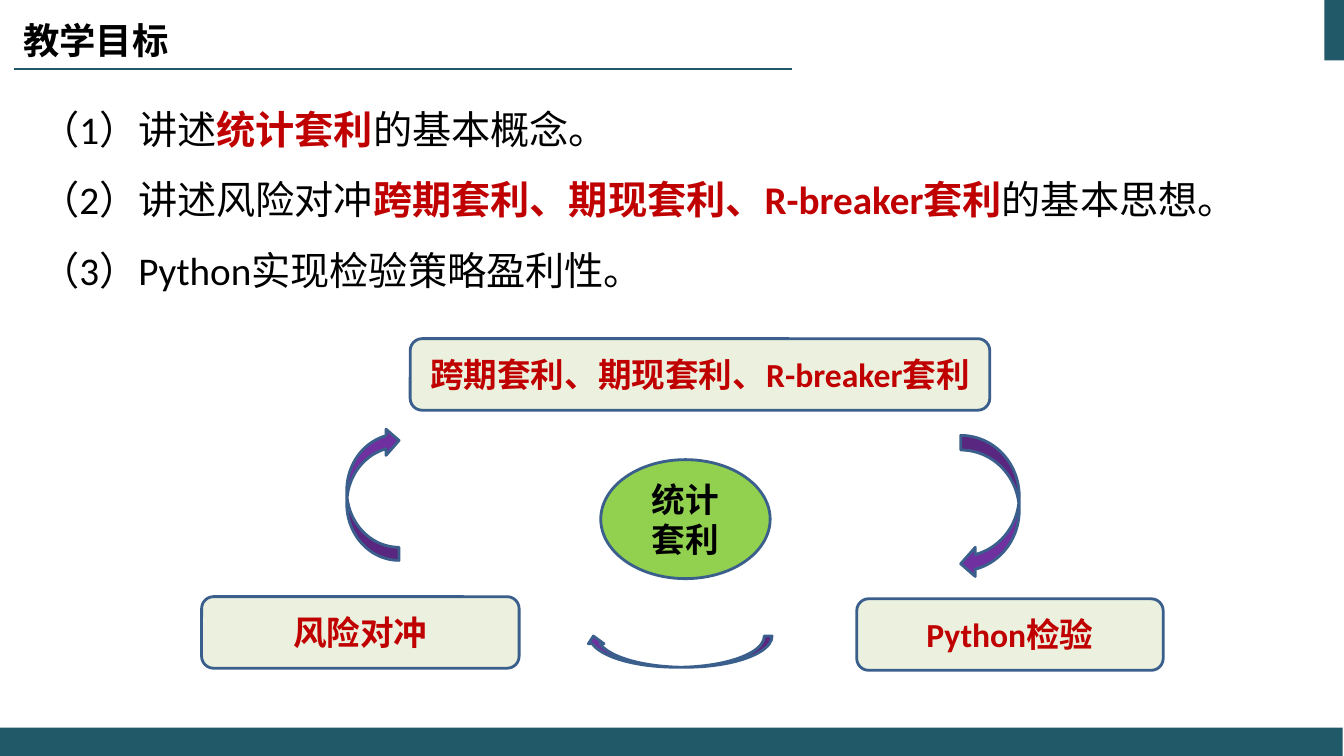
import pptx
import pptx.util
import pptx.dml.color
import pptx.enum.shapes
import pptx.enum.text
import pptx.oxml.ns
import lxml.etree

Pt = pptx.util.Pt
RGB = pptx.dml.color.RGBColor.from_string
SHAPE = pptx.enum.shapes.MSO_SHAPE
ALIGN = pptx.enum.text.PP_ALIGN
qn = pptx.oxml.ns.qn

COLORS = {
    "teal": "215968",
    "red": "C00000",
    "black": "000000",
    "green": "92D050",
    "pale": "EBF1DE",
    "purple": "7030A0",
    "outline": "3A5F8C",
}
CJK = "Noto Sans CJK SC"

prs = pptx.Presentation()
prs.slide_width, prs.slide_height = Pt(960), Pt(540)
s = prs.slides.add_slide(prs.slide_layouts[6])


def add_shape(kind, box, fill, outlined=True):
    sp = s.shapes.add_shape(kind, *[Pt(v) for v in box])
    sp.shadow.inherit = False
    sp.fill.solid()
    sp.fill.fore_color.rgb = RGB(COLORS[fill])
    if outlined:
        sp.line.color.rgb = RGB(COLORS["outline"])
        sp.line.width = Pt(2)
    else:
        sp.line.fill.background()
    return sp


def add_text(tf, paragraphs, size, font="Calibri", align=ALIGN.LEFT, spacing=None):
    tf.word_wrap = True
    for i, runs in enumerate(paragraphs):
        p = tf.add_paragraph() if i else tf.paragraphs[0]
        p.alignment = align
        p.line_spacing = spacing
        for text, color, bold in runs:
            r = p.add_run()
            r.text = text
            r.font.size = Pt(size)
            r.font.bold = bold
            r.font.color.rgb = RGB(COLORS[color])
            r.font.name = font
            ea = lxml.etree.SubElement(r.font._element, qn("a:ea"))
            ea.set("typeface", "Calibri")


add_shape(SHAPE.RECTANGLE, (946.1, 0, 13.9, 43.2), "teal", False)
rule = s.shapes.add_connector(
    pptx.enum.shapes.MSO_CONNECTOR.STRAIGHT, Pt(566), Pt(49), Pt(10), Pt(49))
rule.line.color.rgb = RGB(COLORS["teal"])
rule.line.width = Pt(1.5)
lxml.etree.SubElement(rule._element.spPr, qn("a:effectLst"))
add_shape(SHAPE.RECTANGLE, (0, 519.8, 959, 20.2), "teal", False)

goals = [
    [("（1）讲述", "black", False), ("统计套利", "red", True),
     ("的基本概念。", "black", False)],
    [("（2）讲述风险对冲", "black", False),
     ("跨期套利、期现套利、R-breaker套利", "red", True),
     ("的基本思想。", "black", False)],
    [("（3）Python实现检验策略盈利性。", "black", False)],
]
body = s.shapes.add_textbox(Pt(21.6), Pt(54.7), Pt(906.5), Pt(461.5))
add_text(body.text_frame, goals, 28, spacing=1.5)

hub = add_shape(SHAPE.OVAL, (429.1, 328.3, 121, 85), "green")
add_text(hub.text_frame, [[("统计", "black", True)], [("套利", "black", True)]],
         24, CJK, ALIGN.CENTER)

steps = [
    ("跨期套利、期现套利、R-breaker套利", (293, 241.9, 414, 51.1)),
    ("Python检验", (612, 427.7, 218.9, 51.1)),
    ("风险对冲", (144, 426.2, 226.8, 51.1)),
]
for text, box in steps:
    sp = add_shape(SHAPE.ROUNDED_RECTANGLE, box, "pale")
    add_text(sp.text_frame, [[(text, "red", True)]], 24, align=ALIGN.CENTER)

arrows = [
    (SHAPE.CURVED_LEFT_ARROW, (686.2, 311, 41.8, 102.2), ()),
    (SHAPE.CURVED_LEFT_ARROW, (247.7, 305.3, 37.4, 95), ("flipH", "flipV")),
    (SHAPE.CURVED_UP_ARROW, (418.3, 454.3, 133.2, 22.3), ("flipH",)),
]
for kind, box, flips in arrows:
    sp = add_shape(kind, box, "purple")
    for flip in flips:
        sp._element.spPr.xfrm.set(flip, "1")

title = s.shapes.add_textbox(Pt(9.4), Pt(9.4), Pt(439.9), Pt(38.9))
add_text(title.text_frame, [[("教学目标", "black", True)]], 26, CJK)
title.text_frame.auto_size = pptx.enum.text.MSO_AUTO_SIZE.SHAPE_TO_FIT_TEXT

prs.save("out.pptx")
